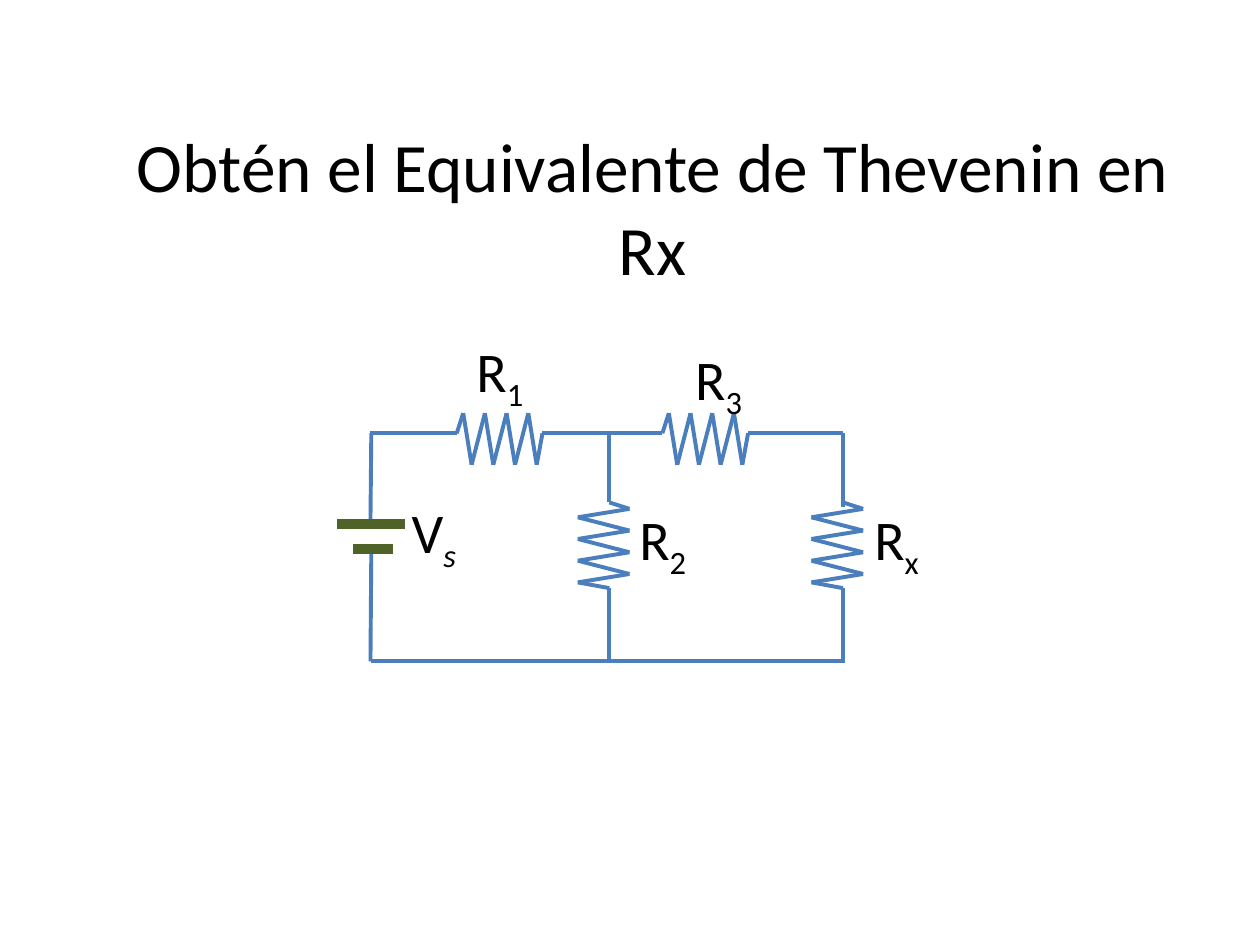
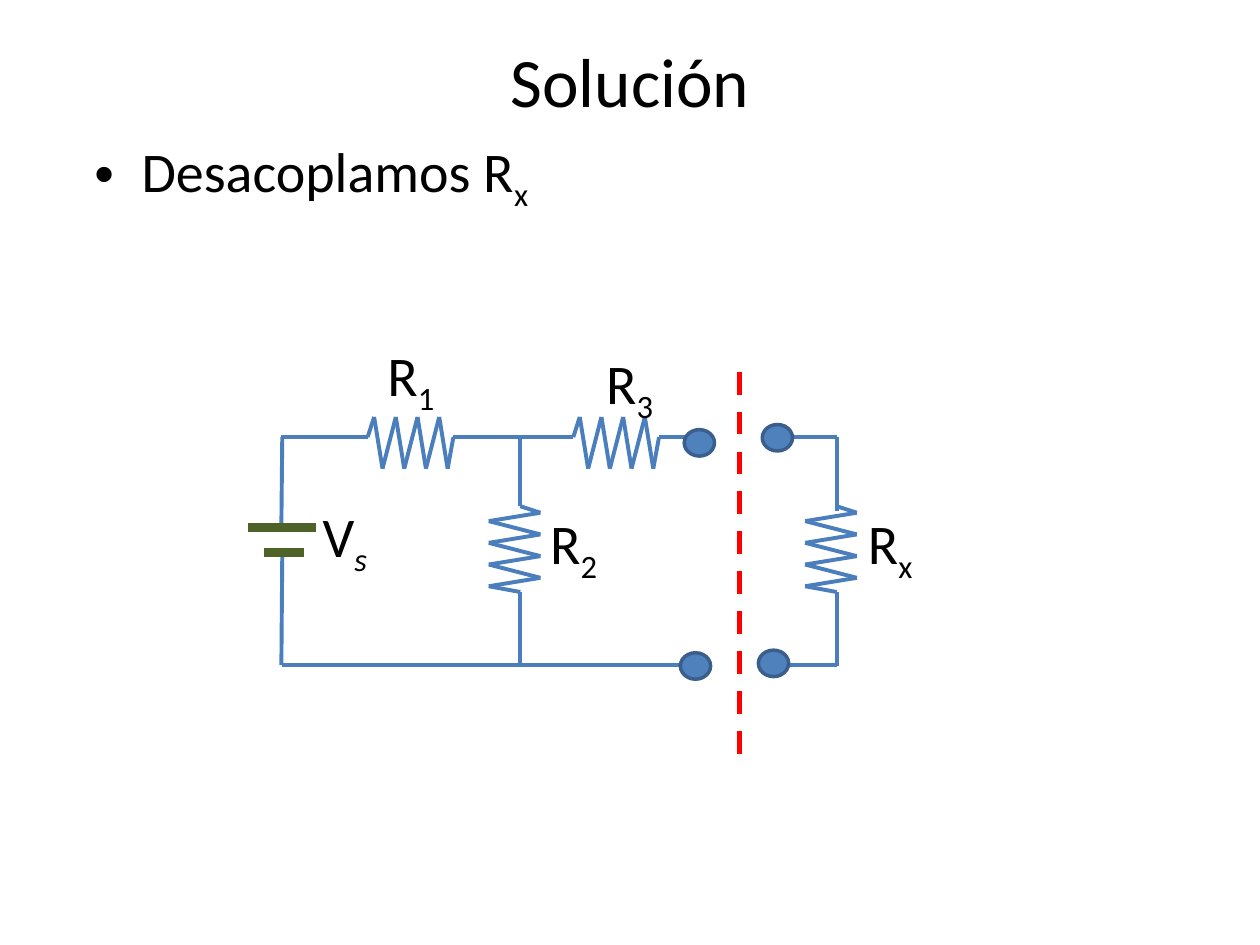
from lxml import etree
from pptx import Presentation
from pptx.dml.color import RGBColor
from pptx.enum.dml import MSO_LINE
from pptx.enum.shapes import MSO_CONNECTOR, MSO_SHAPE
from pptx.enum.text import MSO_ANCHOR, MSO_AUTO_SIZE, PP_ALIGN
from pptx.oxml.ns import qn
from pptx.util import Pt

STRAIGHT = MSO_CONNECTOR.STRAIGHT
ELLIPSE = MSO_SHAPE.OVAL
DASH = MSO_LINE.DASH
MIDDLE = MSO_ANCHOR.MIDDLE
NO_AUTOFIT = MSO_AUTO_SIZE.NONE
CENTER = PP_ALIGN.CENTER

FONT = "Calibri"
BLACK, WIRE, BATTERY = "000000", "4B7EBC", "4F6228"
TERMINAL, TERMINAL_EDGE, CUT = "4F81BD", "3A5F8C", "FF0000"

PEAK, VALLEY = -11.5, 18
ZIGZAG = [(0, 0), (20.8, 0)]
for tooth in range(4):
    ZIGZAG += [(24.5 + 12.4 * tooth, PEAK), (29.3 + 12.4 * tooth, VALLEY)]
ZIGZAG += [(69.8, 0), (90.7, 0)]


def draw_line(shapes, start, end, color=WIRE, width=2.25):
    line = shapes.add_connector(STRAIGHT, *[Pt(v) for v in (*start, *end)])
    line.line.color.rgb = RGBColor.from_string(color)
    line.line.width = Pt(width)
    etree.SubElement(line._element.spPr, qn("a:effectLst"))
    return line


def write_symbol(slide, box, base, subscript, bullet=None):
    frame = slide.shapes.add_textbox(*[Pt(v) for v in box]).text_frame
    frame.word_wrap = True
    paragraph = frame.paragraphs[0]
    paragraph.space_before = Pt(6.4)
    for text in (base, subscript):
        run = paragraph.add_run()
        run.text = text
        run.font.name = FONT
        run.font.size = Pt(32)
        run.font.color.rgb = RGBColor.from_string(BLACK)
    run._r.get_or_add_rPr().set("baseline", "-25000")
    if subscript == "s":
        run.font.italic = True
    properties = paragraph._p.get_or_add_pPr()
    properties.set("marL", str(Pt(27)))
    properties.set("indent", str(-Pt(27)))
    if bullet:
        etree.SubElement(properties, qn("a:buFont")).set("typeface", "Arial")
        etree.SubElement(properties, qn("a:buChar")).set("char", bullet)
    else:
        etree.SubElement(properties, qn("a:buNone"))


prs = Presentation()
prs.slide_width, prs.slide_height = Pt(720), Pt(540)
title_only = prs.slide_layouts[5]

PROBLEMS = [
    ("Obtén el Equivalente de Thevenin en Rx", (49, 72.7, 648, 90),
     (212.2, 247.6), 269.5, 269.5),
    ("Solución", (36, 21.6, 648, 48.2), (161.3, 249.8), 316.8, 236),
]

for title_text, title_box, (left, top), load_x, bottom_end in PROBLEMS:
    slide = prs.slides.add_slide(title_only)
    title = slide.shapes.title
    title.left, title.top, title.width, title.height = [Pt(v) for v in title_box]
    frame = title.text_frame
    frame.text = title_text
    frame.word_wrap = True
    frame.auto_size = NO_AUTOFIT
    frame.vertical_anchor = MIDDLE
    frame.paragraphs[0].alignment = CENTER
    font = frame.paragraphs[0].runs[0].font
    font.name = FONT
    font.size = Pt(39.6)
    font.color.rgb = RGBColor.from_string(BLACK)

    wires = [
        (0, 130.3, bottom_end, 130.3),
        (0, 0, -0.5, 50),
        (0, 67.5, -0.5, 130.3),
        (-1, 0, 38, 0),
        (113, 0, 152, 0),
        (136, 0, 136, 27),
        (136, 104.5, 136, 131),
        (load_x - 39, 0, load_x, 0),
        (load_x, 0, load_x, 42),
        (load_x, 104.5, load_x, 131),
    ]
    if bottom_end < load_x:
        wires.append((load_x - 39, 130, load_x, 130))
    for x1, y1, x2, y2 in wires:
        draw_line(slide.shapes, (left + x1, top + y1), (left + x2, top + y2))

    resistors = [(28, 0, False), (145.5, 0, False),
                 (136, 18.7, True), (load_x, 18.7, True)]
    for x, y, vertical in resistors:
        corners = [(left + x - across, top + y + along) if vertical
                   else (left + x + along, top + y + across)
                   for along, across in ZIGZAG]
        resistor = slide.shapes.add_group_shape()
        for start, end in zip(corners, corners[1:]):
            draw_line(resistor.shapes, start, end)

    battery = slide.shapes.add_group_shape()
    for x1, x2, y in [(-19.5, 19.5, 51.7), (-10.2, 12.2, 66)]:
        draw_line(battery.shapes, (left + x1, top + y), (left + x2, top + y),
                  BATTERY, 5.5)

    labels = [("R", "1", 53, -59, 97), ("R", "3", 178, -54, 97),
              ("R", "2", 146, 37.4, 48), ("V", "s", 16, 33, 97),
              ("R", "x", load_x + 10.8, 37.4, 48)]
    for base, subscript, x, y, width in labels:
        write_symbol(slide, (left + x, top + y, width, 47.5), base, subscript)

for x, y in [(391, 245.5), (388.8, 373), (433.4, 371.5), (435.6, 242.6)]:
    terminal = slide.shapes.add_shape(ELLIPSE, Pt(x), Pt(y), Pt(17.3), Pt(15.1))
    terminal.shadow.inherit = False
    terminal.fill.solid()
    terminal.fill.fore_color.rgb = RGBColor.from_string(TERMINAL)
    terminal.line.color.rgb = RGBColor.from_string(TERMINAL_EDGE)
    terminal.line.width = Pt(2)

cut = draw_line(slide.shapes, (422.6, 212.4), (422.6, 433.4), CUT, 3.25)
cut.line.dash_style = DASH
write_symbol(slide, (46.8, 74.2, 648, 46), "Desacoplamos R", "x", "•")

prs.save("out.pptx")
